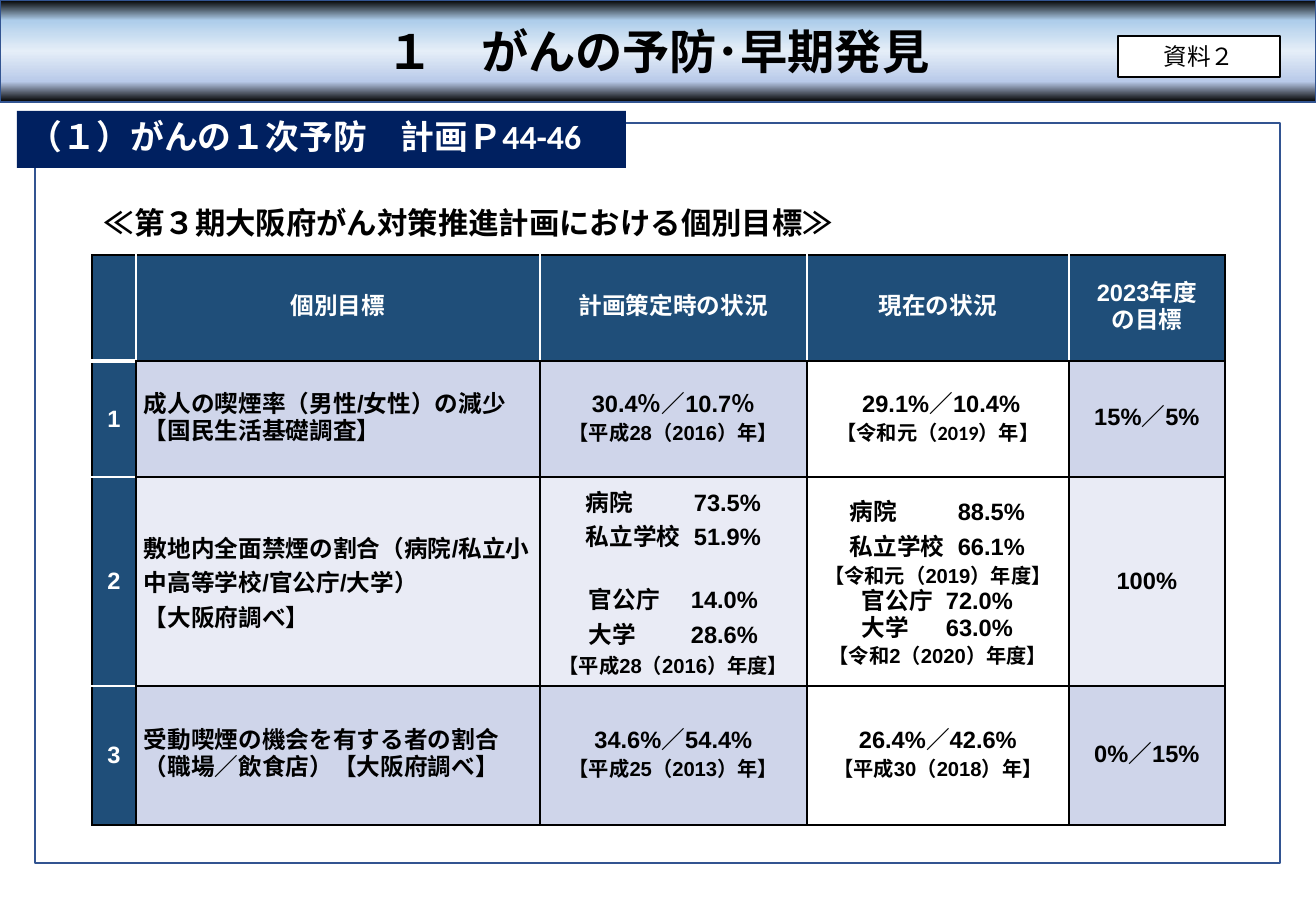
import pptx
import pptx.util
import pptx.dml.color
import pptx.enum.shapes
import pptx.enum.text
import pptx.oxml
import pptx.oxml.ns
from lxml import etree

RGB = pptx.dml.color.RGBColor
ALIGN = pptx.enum.text.PP_ALIGN
ANCHOR = pptx.enum.text.MSO_ANCHOR
Pt = pptx.util.Pt
qn = pptx.oxml.ns.qn

BLACK = RGB(0x00, 0x00, 0x00)
WHITE = RGB(0xFF, 0xFF, 0xFF)
OUTLINE = RGB(0x32, 0x54, 0x91)
NAVY = RGB(0x00, 0x20, 0x60)
HEADER = RGB(0x1F, 0x4E, 0x79)
BAND_DARK = RGB(0xCF, 0xD5, 0xEA)
BAND_LIGHT = RGB(0xE9, 0xEB, 0xF5)
BANNER_STOPS = [
    (0, BLACK), (20, RGB(0xAD, 0xCD, 0xEA)), (50, RGB(0xE5, 0xEE, 0xF8)),
    (80, RGB(0xB9, 0xCA, 0xE9)), (100, BLACK),
]
GOTHIC = "Noto Sans CJK JP"

# Content: boxes with px position, text and format
BANNER = {"at": (0, 0, 1316, 102), "line": OUTLINE, "text": "１　がんの予防･早期発見",
          "size": 28, "font": GOTHIC, "bold": True, "align": ALIGN.CENTER}
FRAME = {"at": (35, 123, 1245, 740), "fill": WHITE, "line": OUTLINE}
SECTION = {"at": (17, 111, 609, 57), "fill": NAVY, "text": "（１）がんの１次予防　計画Ｐ44-46",
           "size": 20, "font": "Calibri", "bold": True, "color": WHITE, "spacing": 20}
CAPTION = {"at": (92, 198, 812, 49), "text": "≪第３期大阪府がん対策推進計画における個別目標≫",
           "size": 18, "font": "Calibri", "bold": True}
DOCUMENT_TAG = {"at": (1118, 36, 162, 41), "fill": WHITE, "line": BLACK, "text": "資料２",
                "size": 14, "font": GOTHIC, "align": ALIGN.CENTER}

# Content: table; each paragraph is (text, style name)
STYLES = {
    "main": {"spacing": 16},
    "note": {"size": 12, "spacing": 16},
    "calibri note": {"size": 12, "spacing": 16, "font": "Calibri"},
    "loose": {},
    "loose note": {"size": 12},
    "tab goal": {"spacing": 16, "tabs": (213,)},
    "plan upper": {"tabs": (38, 146)},
    "plan lower": {"tabs": (41, 143)},
    "plan lower first": {"tabs": (41, 143), "before": 17},
    "now upper": {"tabs": (35, 143)},
    "now lower": {"tabs": (47, 131), "spacing": 16},
}
TABLE_AT = (92, 255)
COLUMNS = [44, 404, 267, 262, 156]
ROWS = [106, 116, 209, 139]
CELLS = [
    [[], [("個別目標", "main")], [("計画策定時の状況", "main")], [("現在の状況", "main")],
     [("2023年度", "main"), ("の目標", "main")]],
    [[("1", "main")],
     [("成人の喫煙率（男性/女性）の減少", "main"), ("【国民生活基礎調査】", "main")],
     [("30.4％／10.7％", "main"), ("【平成28（2016）年】", "note")],
     [(" 29.1%／10.4%", "main"), ("【令和元（2019）年】", "calibri note")],
     [("15%／5%", "main")]],
    [[("2", "main")],
     [("敷地内全面禁煙の割合（病院/私立小中高等学校/官公庁/大学）", "loose"),
      ("【大阪府調べ】", "loose")],
     [("\t病院\t73.5%", "plan upper"), ("\t私立学校\t51.9%", "plan upper"),
      ("\t官公庁\t14.0%", "plan lower first"), ("\t大学\t28.6%", "plan lower"),
      ("【平成28（2016）年度】", "loose note")],
     [("\t病院\t88.5%", "now upper"), ("\t私立学校\t66.1%", "now upper"),
      ("【令和元（2019）年度】", "note"),
      ("\t官公庁\t72.0%", "now lower"), ("\t大学\t63.0%", "now lower"),
      ("【令和2（2020）年度】", "note")],
     [("100%", "main")]],
    [[("3", "main")],
     [("受動喫煙の機会を有する者の割合\t（職場／飲食店）【大阪府調べ】", "tab goal")],
     [("34.6%／54.4%", "main"), ("【平成25（2013）年】", "note")],
     [("26.4%／42.6%", "main"), ("【平成30（2018）年】", "note")],
     [("0%／15%", "main")]],
]
GOAL_COLUMN, NOW_COLUMN = 1, 3


def px(length):
    return round(length * 914400 / 121.5)


def write(para, text, style):
    para.alignment = style.get("align", ALIGN.LEFT)
    if "spacing" in style:
        para.line_spacing = Pt(style["spacing"])
    if "before" in style:
        para.space_before = Pt(style["before"])
    if "tabs" in style:
        tab_list = etree.SubElement(para._p.get_or_add_pPr(), qn("a:tabLst"))
        for stop in style["tabs"]:
            etree.SubElement(tab_list, qn("a:tab"), pos=str(px(stop)), algn="l")
    span = para.add_run()
    span.text = text
    values = {"size": Pt(style.get("size", 14)), "bold": style.get("bold", False),
              "name": style.get("font", "Arial")}
    for name, value in values.items():
        setattr(span.font, name, value)
    span.font.color.rgb = style.get("color", BLACK)
    etree.SubElement(span._r.get_or_add_rPr(), qn("a:ea"), typeface=GOTHIC)


def add_box(page, item):
    box = page.shapes.add_shape(pptx.enum.shapes.MSO_SHAPE.RECTANGLE, *map(px, item["at"]))
    box.shadow.inherit = False
    if "fill" in item:
        box.fill.solid()
        box.fill.fore_color.rgb = item["fill"]
    else:
        box.fill.background()
    if "line" in item:
        box.line.color.rgb = item["line"]
        box.line.width = Pt(1)
    else:
        box.line.fill.background()
    if "text" in item:
        box.text_frame.word_wrap = True
        box.text_frame.vertical_anchor = ANCHOR.MIDDLE
        write(box.text_frame.paragraphs[0], item["text"], item)
    return box


def fill_banner(box):
    box.fill.gradient()
    box.fill.gradient_angle = 270
    stops = box._element.spPr.find(qn("a:gradFill")).find(qn("a:gsLst"))
    for old_stop in list(stops):
        stops.remove(old_stop)
    for percent, color in BANNER_STOPS:
        stop = etree.SubElement(stops, qn("a:gs"), pos=str(percent * 1000))
        etree.SubElement(stop, qn("a:srgbClr"), val=str(color))


def set_borders(cell, row, column):
    # Inner lines are white inside the header row and the number column
    left = WHITE if row == 0 and column > 0 else BLACK
    right = WHITE if row == 0 and column < len(COLUMNS) - 1 else BLACK
    top = WHITE if column == 0 and row > 0 else BLACK
    bottom = WHITE if column == 0 and row < len(ROWS) - 1 else BLACK
    sides = {"a:lnL": left, "a:lnR": right, "a:lnT": top, "a:lnB": bottom}
    properties = cell._tc.get_or_add_tcPr()
    for index, (side, color) in enumerate(sides.items()):
        thick = column == 0 and (row, side) in ((0, "a:lnB"), (1, "a:lnT"))
        line = etree.Element(qn(side), w=str(Pt(3 if thick else 1)))
        solid = etree.SubElement(line, qn("a:solidFill"))
        etree.SubElement(solid, qn("a:srgbClr"), val=str(color))
        properties.insert(index, line)


def fill_cell(cell, paragraphs, row, column):
    heading = row == 0 or column == 0
    if column == NOW_COLUMN and not heading:
        cell.fill.background()
    else:
        cell.fill.solid()
        cell.fill.fore_color.rgb = HEADER if heading else (BAND_DARK if row % 2 else BAND_LIGHT)
    values = {"margin_left": px(8), "margin_right": px(8), "margin_top": 0,
              "margin_bottom": 0, "vertical_anchor": ANCHOR.MIDDLE}
    for name, value in values.items():
        setattr(cell, name, value)
    set_borders(cell, row, column)
    for index, (text, style_name) in enumerate(paragraphs):
        frame = cell.text_frame
        para = frame.add_paragraph() if index else frame.paragraphs[0]
        style = {"bold": True, "color": WHITE if heading else BLACK, **STYLES[style_name]}
        if "tabs" not in style and (heading or column != GOAL_COLUMN):
            style["align"] = ALIGN.CENTER
        write(para, text, style)


def add_goal_table(page):
    size = (sum(COLUMNS), sum(ROWS))
    table = page.shapes.add_table(len(ROWS), len(COLUMNS), *map(px, TABLE_AT + size)).table
    table.first_row = table.horz_banding = False
    for index, width in enumerate(COLUMNS):
        table.columns[index].width = px(width)
    for row, height in enumerate(ROWS):
        table.rows[row].height = px(height)
        for column, paragraphs in enumerate(CELLS[row]):
            fill_cell(table.cell(row, column), paragraphs, row, column)


def main():
    deck = pptx.Presentation()
    deck.slide_width, deck.slide_height = px(1316), px(911)
    page = deck.slides.add_slide(deck.slide_layouts[6])

    # Banner and frame
    fill_banner(add_box(page, BANNER))
    add_box(page, FRAME)

    # Table, then the labels above it
    add_goal_table(page)
    add_box(page, SECTION)
    caption = page.shapes.add_textbox(*map(px, CAPTION["at"]))
    caption.text_frame.word_wrap = True
    write(caption.text_frame.paragraphs[0], CAPTION["text"], CAPTION)
    add_box(page, DOCUMENT_TAG)

    deck.save("out.pptx")


if __name__ == "__main__":
    main()
